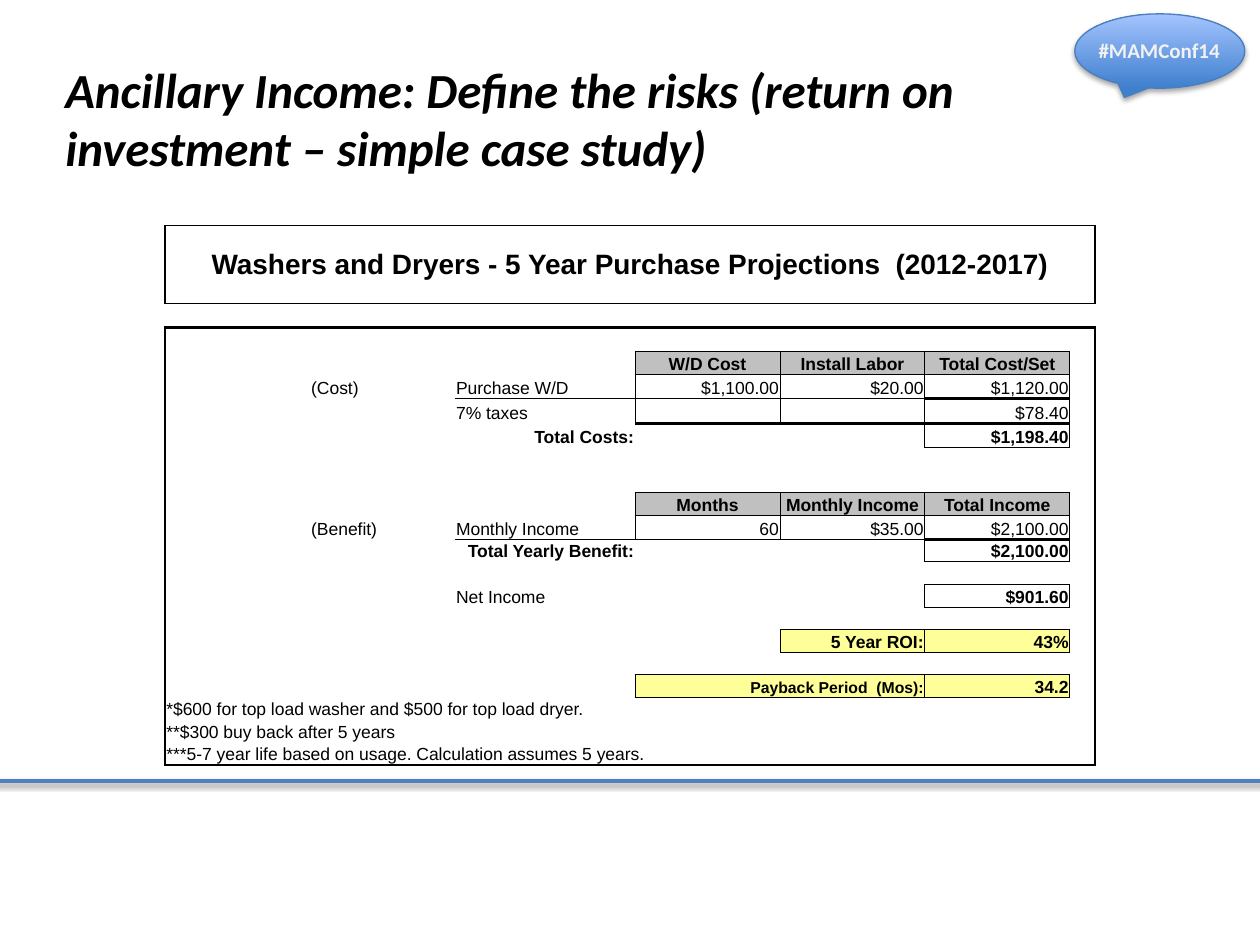
import pptx
import pptx.dml.color
import pptx.enum.shapes
import pptx.enum.text
import pptx.oxml.ns
import pptx.util
from lxml import etree

ALIGN = pptx.enum.text.PP_ALIGN
ANCHOR = pptx.enum.text.MSO_ANCHOR
BLACK, WHITE, GREY, YELLOW = "000000", "FFFFFF", "C0C0C0", "FFFF99"
THIN, MEDIUM, PANEL, HEAVY = 0.5, 1, 1.5, 2


def color(value):
    return pptx.dml.color.RGBColor.from_string(value)


def add_xml(parent, tag, **attributes):
    element = etree.SubElement(parent, pptx.oxml.ns.qn(tag))
    for name, value in attributes.items():
        element.set(name, str(value))
    return element


class Borders:
    """Cell edges by (row, column, side); each edge is shared with its neighbour."""

    NEIGHBOURS = {"L": (0, -1, "R"), "R": (0, 1, "L"), "T": (-1, 0, "B"), "B": (1, 0, "T")}

    def __init__(self):
        self.widths = {}

    def edge(self, row, column, side, width):
        down, across, opposite = self.NEIGHBOURS[side]
        self.widths[row, column, side] = width
        self.widths[row + down, column + across, opposite] = width

    def frame(self, top, left, bottom, right, width):
        for row in range(top, bottom + 1):
            self.edge(row, left, "L", width)
            self.edge(row, right, "R", width)
        for column in range(left, right + 1):
            self.edge(top, column, "T", width)
            self.edge(bottom, column, "B", width)

    def boxes(self, top, left, bottom, right, width):
        for row in range(top, bottom + 1):
            for column in range(left, right + 1):
                self.frame(row, column, row, column, width)


class SlideBuilder:
    """Places elements on a grid of 100 columns by 75 rows."""

    heading_font, table_font = "Calibri", "Arial"

    def __init__(self, presentation):
        self.slide = presentation.slides.add_slide(presentation.slide_layouts[6])
        self.column = presentation.slide_width / 100
        self.row = presentation.slide_height / 75

    def place(self, left, top, width, height):
        return (round(left * self.column), round(top * self.row),
                round(width * self.column), round(height * self.row))

    def font(self, paragraph, name, size, hex_color, bold=False, italic=False):
        font = paragraph.font
        font.name, font.size = name, pptx.util.Pt(size)
        font.bold, font.italic = bold, italic
        font.color.rgb = color(hex_color)

    def shadow(self, properties, opacity, blur, distance):
        for old in properties.findall(pptx.oxml.ns.qn("a:effectLst")):
            properties.remove(old)
        outer = add_xml(add_xml(properties, "a:effectLst"), "a:outerShdw",
                        blurRad=pptx.util.Pt(blur), dist=pptx.util.Pt(distance),
                        dir=5400000, rotWithShape=0)
        add_xml(add_xml(outer, "a:srgbClr", val=BLACK), "a:alpha", val=opacity * 1000)

    def text(self, box, words, size, hex_color, italic=False):
        frame = self.slide.shapes.add_textbox(*self.place(*box)).text_frame
        frame.word_wrap = True
        paragraph = frame.paragraphs[0]
        paragraph.text = words
        self.font(paragraph, self.heading_font, size, hex_color, True, italic)

    def callout(self, box, bottom_color, top_color, line_color):
        kind = pptx.enum.shapes.MSO_SHAPE.OVAL_CALLOUT
        shape = self.slide.shapes.add_shape(kind, *self.place(*box))
        shape.shadow.inherit = False
        shape.fill.gradient()
        shape.fill.gradient_angle = 90
        for stop, value in zip(shape.fill.gradient_stops, (bottom_color, top_color)):
            stop.color.rgb = color(value)
        shape.line.color.rgb = color(line_color)
        shape.line.width = pptx.util.Pt(0.75)
        self.shadow(shape.element.spPr, 35, 3.1, 1.8)

    def rule(self, left, right, top, line_color):
        x1, y, x2, _ = self.place(left, top, right, 0)
        line = self.slide.shapes.add_connector(
            pptx.enum.shapes.MSO_CONNECTOR.STRAIGHT, x1, y, x2, y)
        line.line.color.rgb = color(line_color)
        line.line.width = pptx.util.Pt(2)
        self.shadow(line._element.spPr, 38, 3.1, 1.6)

    def table(self, left, top, columns, rows, entries, merges, borders):
        box = self.place(left, top, sum(columns), sum(rows))
        table = self.slide.shapes.add_table(len(rows), len(columns), *box).table
        table.first_row = table.horz_banding = False
        for column, width in zip(table.columns, columns):
            column.width = round(width * self.column)
        for row, height in zip(table.rows, rows):
            row.height = round(height * self.row)
        for row, first, last in merges:
            table.cell(row, first).merge(table.cell(row, last))
            borders.widths[row, first, "R"] = borders.widths.get((row, last, "R"))
        for row in range(len(rows)):
            for column in range(len(columns)):
                cell = table.cell(row, column)
                self.cell(cell, *entries.get((row, column), ("",)))
                self.cell_borders(cell, row, column, borders)

    def cell(self, cell, words, align=ALIGN.LEFT, bold=False, fill=WHITE, size=10,
             anchor=ANCHOR.BOTTOM):
        inset = pptx.util.Inches(0.01)
        cell.margin_left = cell.margin_right = cell.margin_top = inset
        cell.margin_bottom = 0
        cell.vertical_anchor = anchor
        cell.fill.solid()
        cell.fill.fore_color.rgb = color(fill)
        paragraph = cell.text_frame.paragraphs[0]
        paragraph.alignment = align
        if words:
            paragraph.text = words
        else:
            # Keeps empty cells from stretching their row
            add_xml(paragraph._p, "a:endParaRPr", sz=size * 100)
        self.font(paragraph, self.table_font, size, BLACK, bold)

    def cell_borders(self, cell, row, column, borders):
        properties = cell._tc.get_or_add_tcPr()
        for index, side in enumerate("LRTB"):
            width = borders.widths.get((row, column, side))
            line = add_xml(properties, "a:ln" + side, w=pptx.util.Pt(width or 0))
            if width:
                add_xml(add_xml(line, "a:solidFill"), "a:srgbClr", val=BLACK)
            else:
                add_xml(line, "a:noFill")
            properties.insert(index, line)


def table_entries():
    right, center = ALIGN.RIGHT, ALIGN.CENTER
    entries = {(0, 0): ("Washers and Dryers - 5 Year Purchase Projections  (2012-2017)",
                        center, True, WHITE, 16, ANCHOR.MIDDLE)}
    headers = {3: ("W/D Cost", "Install Labor", "Total Cost/Set"),
               9: ("Months", "Monthly Income", "Total Income")}
    amounts = {4: ("$1,100.00", "$20.00", "$1,120.00"), 5: ("", "", "$78.40"),
               10: ("60", "$35.00", "$2,100.00")}
    for row, words in headers.items():
        for column, word in enumerate(words, 3):
            entries[row, column] = (word, center, True, GREY)
    for row, words in amounts.items():
        for column, word in enumerate(words, 3):
            entries[row, column] = (word, right)
    labels = {(4, 1): "(Cost)", (4, 2): "Purchase W/D", (5, 2): "7% taxes",
              (10, 1): "(Benefit)", (10, 2): "Monthly Income", (13, 2): "Net Income",
              (18, 0): "*$600 for top load washer and $500 for top load dryer.",
              (19, 0): "**$300 buy back after 5 years",
              (20, 0): "***5-7 year life based on usage. Calculation assumes 5 years."}
    entries.update({place: (word,) for place, word in labels.items()})
    totals = {(6, 2): "Total Costs:", (6, 5): "$1,198.40",
              (11, 2): "Total Yearly Benefit:", (11, 5): "$2,100.00", (13, 5): "$901.60"}
    entries.update({place: (word, right, True) for place, word in totals.items()})
    results = {(15, 4): ("5 Year ROI:", 10), (15, 5): ("43%", 10),
               (17, 3): ("Payback Period  (Mos):", 9), (17, 5): ("34.2", 10)}
    for place, (word, size) in results.items():
        entries[place] = (word, right, True, YELLOW, size)
    return entries


def table_borders():
    borders = Borders()
    borders.frame(0, 0, 0, 6, MEDIUM)
    borders.frame(2, 0, 20, 6, PANEL)
    # Cost and benefit grids, then the single result boxes
    for area in ((3, 3, 5, 5), (9, 3, 10, 5), (6, 5, 6, 5), (11, 5, 11, 5),
                 (13, 5, 13, 5), (15, 4, 15, 5), (17, 5, 17, 5)):
        borders.boxes(*area, THIN)
    borders.frame(17, 3, 17, 4, THIN)
    for row in (4, 10):
        borders.edge(row, 2, "B", THIN)
    # Heavy sum lines
    for row, column in ((4, 5), (5, 3), (5, 4), (5, 5), (10, 5)):
        borders.edge(row, column, "B", HEAVY)
    return borders


def main():
    presentation = pptx.Presentation()
    presentation.slide_width = pptx.util.Inches(10)
    presentation.slide_height = pptx.util.Inches(7.5)
    builder = SlideBuilder(presentation)

    # Conference tag and footer rule
    builder.callout((85.3, 1.1, 13.5, 5.9), "3F80CE", "A4C4FF", "4B7EBC")
    builder.text((86.2, 2.5, 13.9, 3), "#MAMConf14", 12, "F2F2F2")
    builder.rule(-0.9, 100.6, 62, "4F81BD")

    # Projection table
    columns = [11.5, 11.5, 14.3, 11.5, 11.5, 11.5, 2]
    rows = [6.2, 1.9, 1.9, 1.8, 1.9, 2, 1.9, 1.8, 1.8, 1.8, 1.9, 1.8,
            1.8, 1.8, 1.7, 1.8, 1.8, 1.7, 1.8, 1.8, 1.7]
    merges = [(0, 0, 6), (17, 3, 4), (18, 0, 2), (19, 0, 1), (20, 0, 3)]
    builder.table(13.1, 17.9, columns, rows, table_entries(), merges, table_borders())

    # Title
    builder.text((4.2, 4.2, 78.7, 10.4), "Ancillary Income: Define the risks "
                 "(return on investment – simple case study)", 28, BLACK, italic=True)
    presentation.save("out.pptx")


if __name__ == "__main__":
    main()
